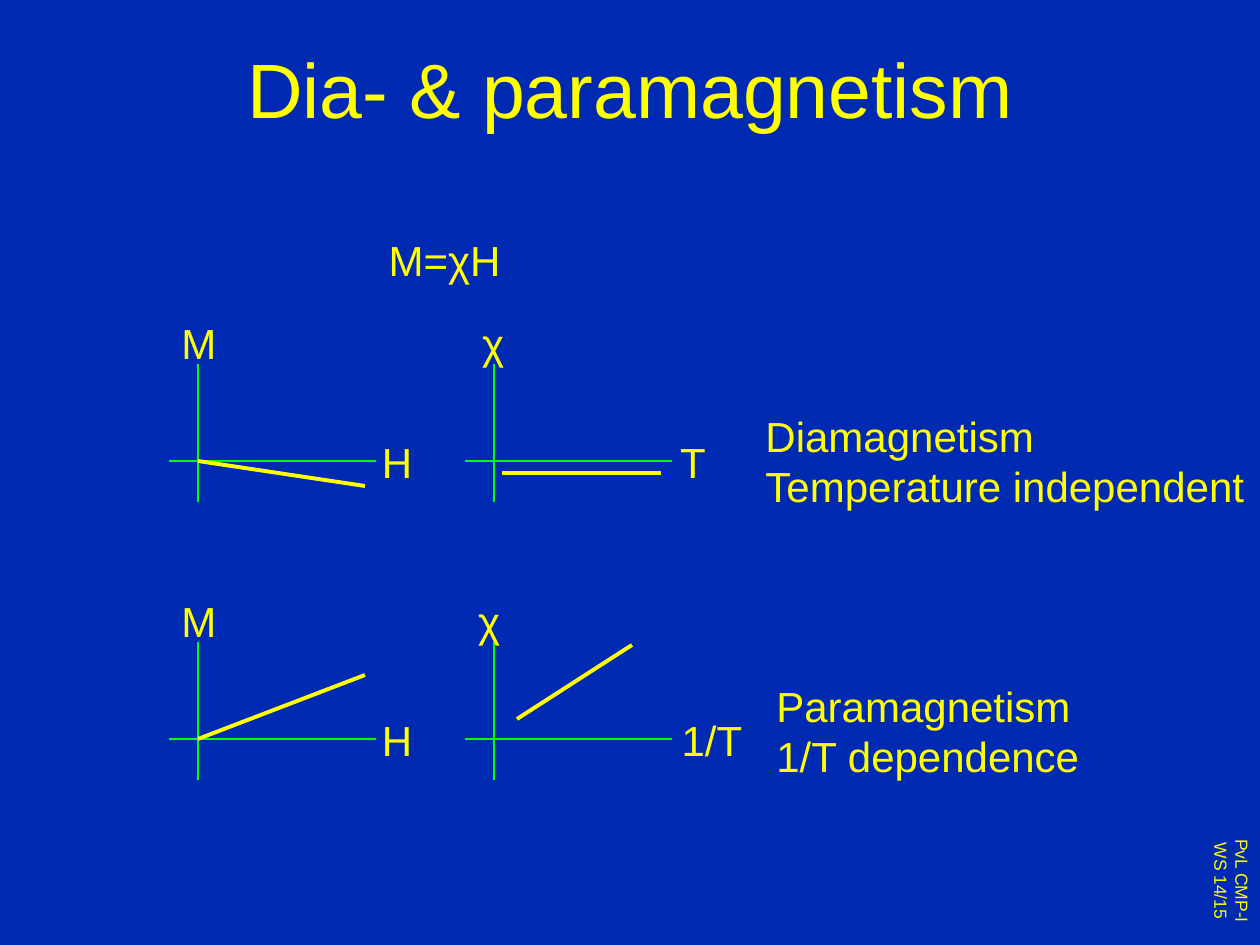
import pptx
import pptx.dml.color
import pptx.enum.shapes
import pptx.enum.text
import pptx.util
import lxml.etree
from dataclasses import dataclass

SCALE = 914400 / 126
ALIGN = pptx.enum.text.PP_ALIGN
ANCHOR = pptx.enum.text.MSO_ANCHOR


@dataclass(frozen=True)
class Theme:
    """Colours, type and line widths of the deck."""
    background: str = "002AB2"
    ink: str = "FFFF00"
    axis: str = "00FF00"
    font: str = "Arial"
    title_size: int = 44
    body_size: int = 24
    footer_size: int = 10
    axis_width: float = 0.75
    curve_width: float = 2.25


THEME = Theme()


def emu(pixels):
    """Turn px into EMU."""
    return pptx.util.Emu(round(pixels * SCALE))


def colour(value):
    """Turn a hex value into a colour."""
    return pptx.dml.color.RGBColor.from_string(value)


def apply_format(target, values):
    """Set each attribute of a dict on the target."""
    for name, value in values.items():
        setattr(target, name, value)


def add_text(page, box, lines, size=THEME.body_size, align=ALIGN.CENTER,
             anchor=ANCHOR.TOP, wrap=False):
    """Place lines of text, one paragraph each, in the box."""
    shape = page.shapes.add_textbox(*map(emu, box))
    frame = shape.text_frame
    apply_format(frame, {"word_wrap": wrap, "vertical_anchor": anchor})
    for index, line in enumerate(lines):
        para = frame.paragraphs[0] if index == 0 else frame.add_paragraph()
        para.alignment = align
        span = para.add_run()
        span.text = line
        apply_format(span.font, {"name": THEME.font, "size": pptx.util.Pt(size)})
        span.font.color.rgb = colour(THEME.ink)
    return shape


def add_line(page, start, end, ink, width):
    """Draw a straight line without shadow."""
    line = page.shapes.add_connector(
        pptx.enum.shapes.MSO_CONNECTOR.STRAIGHT, *map(emu, (*start, *end)))
    line.line.color.rgb = colour(ink)
    line.line.width = pptx.util.Pt(width)
    properties = line._element.spPr
    lxml.etree.SubElement(properties, pptx.oxml.ns.qn("a:effectLst"))


def add_plot(page, box, x_label, y_label, curve, x_center=228, y_center=28):
    """Draw a labelled pair of axes and a curve given relative to the box."""
    left, top, width, height = box
    origin_x, origin_y = left + 29, top + 97
    axes = (((origin_x, top), (origin_x, top + height)),
            ((left, origin_y), (left + width, origin_y)))
    for start, end in axes:
        add_line(page, start, end, THEME.axis, THEME.axis_width)
    for label, center, offset in ((x_label, x_center, 66), (y_label, y_center, -53)):
        label_width = 40 + 16 * len(label)
        add_text(page, (left + center - label_width / 2, top + offset,
                        label_width, 63), [label])
    start, end = ((left + x, top + y) for x, y in curve)
    add_line(page, start, end, THEME.ink, THEME.curve_width)


def add_title(page, box):
    """Place the title in the middle of its box."""
    add_text(page, box, ["Dia- & paramagnetism"], THEME.title_size,
             anchor=ANCHOR.MIDDLE, wrap=True)


def add_footer(page, box):
    """Place the turned course mark."""
    shape = add_text(page, box, ["PvL CMP-I", "WS 14/15"], THEME.footer_size)
    shape.text_frame._txBody.bodyPr.set("vert", "vert")


def add_row(page, box, plots, lines, note_box):
    """Place two plots side by side and their description."""
    left, top, width, height = box
    for index, plot in enumerate(plots):
        add_plot(page, (left + 296 * index, top, width, height), **plot)
    x, y, note_width, note_height = note_box
    add_text(page, (left + x, top + y, note_width, note_height), lines,
             align=ALIGN.LEFT)


def build():
    """Build and save the deck."""
    deck = pptx.Presentation()
    apply_format(deck, {"slide_width": emu(1260), "slide_height": emu(945)})
    page = deck.slides.add_slide(deck.slide_layouts[6])
    page.background.fill.solid()
    page.background.fill.fore_color.rgb = colour(THEME.background)
    add_footer(page, (1191, 832, 68, 98))
    add_title(page, (95, 9, 1071, 157))
    add_text(page, (375, 228, 139, 63), ["M=χH"])
    add_row(page, (169, 364, 207, 138), (
        {"x_label": "H", "y_label": "M", "curve": ((29, 97), (196, 122))},
        {"x_label": "T", "y_label": "χ", "curve": ((37, 109), (196, 109))},
    ), ["Diamagnetism", "Temperature independent"], (584, 40, 509, 113))
    add_row(page, (169, 642, 207, 138), (
        {"x_label": "H", "y_label": "M", "curve": ((29, 97), (196, 33))},
        {"x_label": "1/T", "y_label": "χ", "curve": ((52, 77), (167, 3)),
         "x_center": 247, "y_center": 24},
    ), ["Paramagnetism", "1/T dependence"], (595, 32, 329, 113))
    deck.save("out.pptx")


if __name__ == "__main__":
    build()
